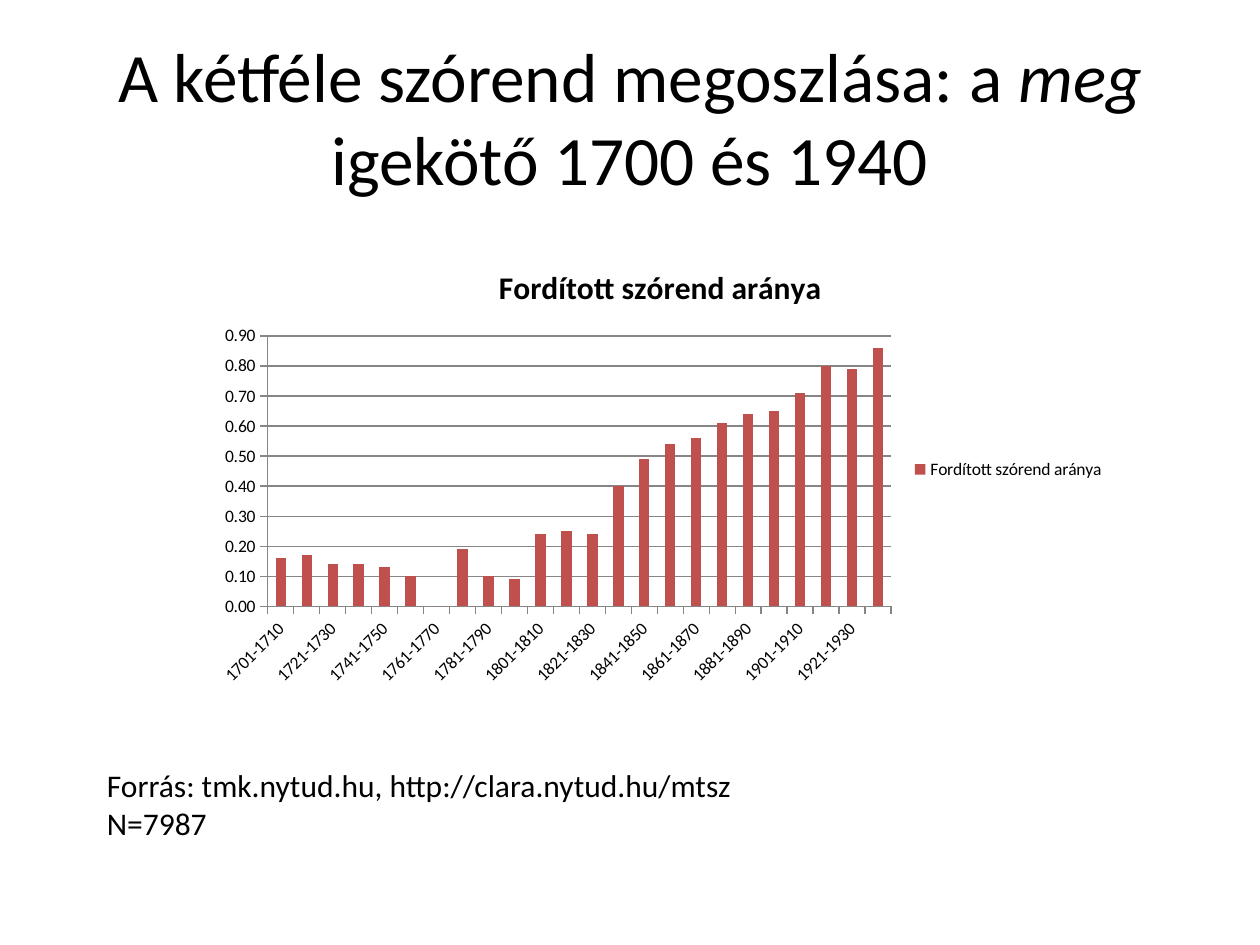
from typing import NamedTuple

from pptx import Presentation
from pptx.chart.data import CategoryChartData as ChartData
from pptx.dml.color import RGBColor
from pptx.enum.chart import XL_CHART_TYPE as ChartType
from pptx.enum.chart import XL_LEGEND_POSITION as LegendPosition
from pptx.enum.chart import XL_TICK_MARK as TickMark
from pptx.enum.text import MSO_ANCHOR as Anchor
from pptx.enum.text import MSO_AUTO_SIZE as AutoSize
from pptx.enum.text import PP_ALIGN as Align
from pptx.util import Pt

FONT = "Calibri"
COLORS = {"text": "000000", "bar": "C0504D", "line": "868686"}
SERIES_NAME = "Fordított szórend aránya"
RATIOS = [
    0.16, 0.17, 0.14, 0.14, 0.13, 0.10, 0.00, 0.19,
    0.10, 0.09, 0.24, 0.25, 0.24, 0.40, 0.49, 0.54,
    0.56, 0.61, 0.64, 0.65, 0.71, 0.80, 0.79, 0.86,
]


class Area(NamedTuple):
    left: float
    top: float
    width: float
    height: float

    def lengths(self) -> list:
        return [Pt(value) for value in self]


class Span(NamedTuple):
    text: str
    italic: bool = False


TITLE_AREA = Area(36, 21.6, 648, 90)
CHART_AREA = Area(115.92, 139.68, 522.72, 257.04)
SOURCE_AREA = Area(54, 434.16, 402.48, 51.12)
TITLE_SPANS = [
    Span("A kétféle szórend megoszlása: a "),
    Span("meg ", italic=True),
    Span("igekötő 1700 és 1940"),
]


def color(name: str) -> RGBColor:
    return RGBColor.from_string(COLORS[name])


def style_font(font, size: float, bold: bool = False) -> None:
    font.name, font.size, font.bold = FONT, Pt(size), bold
    font.color.rgb = color("text")


def decades() -> list[str]:
    """Ten-year periods; the eighth one starts a year late."""
    starts = range(1701, 1941, 10)
    return [f"{1772 if start == 1771 else start}-{start + 9}" for start in starts]


def add_title(page) -> None:
    box = page.shapes.title
    box.left, box.top, box.width, box.height = TITLE_AREA.lengths()
    frame = box.text_frame
    frame.vertical_anchor = Anchor.MIDDLE
    frame.word_wrap = True
    frame.auto_size = AutoSize.NONE
    para = frame.paragraphs[0]
    para.alignment = Align.CENTER
    style_font(para.font, 39.6)
    for span in TITLE_SPANS:
        run = para.add_run()
        run.text = span.text
        run.font.italic = span.italic


def style_axis(axis) -> None:
    axis.major_tick_mark = TickMark.OUTSIDE
    axis.minor_tick_mark = TickMark.NONE
    axis.format.line.color.rgb = color("line")
    style_font(axis.tick_labels.font, 10)


def add_ratio_chart(page) -> None:
    data = ChartData(number_format="0.00")
    data.categories = decades()
    data.add_series(SERIES_NAME, RATIOS)
    chart = page.shapes.add_chart(
        ChartType.COLUMN_CLUSTERED, *CHART_AREA.lengths(), data
    ).chart
    style_font(chart.font, 10)

    # Heading and legend
    chart.has_title = True
    heading = chart.chart_title.text_frame
    heading.text = SERIES_NAME
    style_font(heading.paragraphs[0].font, 18, bold=True)
    chart.has_legend = True
    chart.legend.position = LegendPosition.RIGHT
    chart.legend.include_in_layout = False
    style_font(chart.legend.font, 10)

    # Axes
    for axis in (chart.category_axis, chart.value_axis):
        style_axis(axis)
    values = chart.value_axis
    values.minimum_scale, values.maximum_scale, values.major_unit = 0, 0.9, 0.1
    values.tick_labels.number_format = "0.00"
    values.tick_labels.number_format_is_linked = False
    values.has_major_gridlines = True
    values.major_gridlines.format.line.color.rgb = color("line")

    # Columns
    plot = chart.plots[0]
    plot.gap_width = 150
    plot.vary_by_categories = False
    fill = plot.series[0].format.fill
    fill.solid()
    fill.fore_color.rgb = color("bar")


def add_source(page) -> None:
    frame = page.shapes.add_textbox(*SOURCE_AREA.lengths()).text_frame
    frame.word_wrap = True
    frame.auto_size = AutoSize.SHAPE_TO_FIT_TEXT
    para = frame.paragraphs[0]
    para.text = "Forrás: tmk.nytud.hu, http://clara.nytud.hu/mtsz N=7987"
    style_font(para.font, 18)


def main() -> None:
    deck = Presentation()
    deck.slide_width, deck.slide_height = Pt(720), Pt(540)
    title_only = deck.slide_layouts[5]
    page = deck.slides.add_slide(title_only)
    add_title(page)
    add_ratio_chart(page)
    add_source(page)
    deck.save("out.pptx")


if __name__ == "__main__":
    main()
